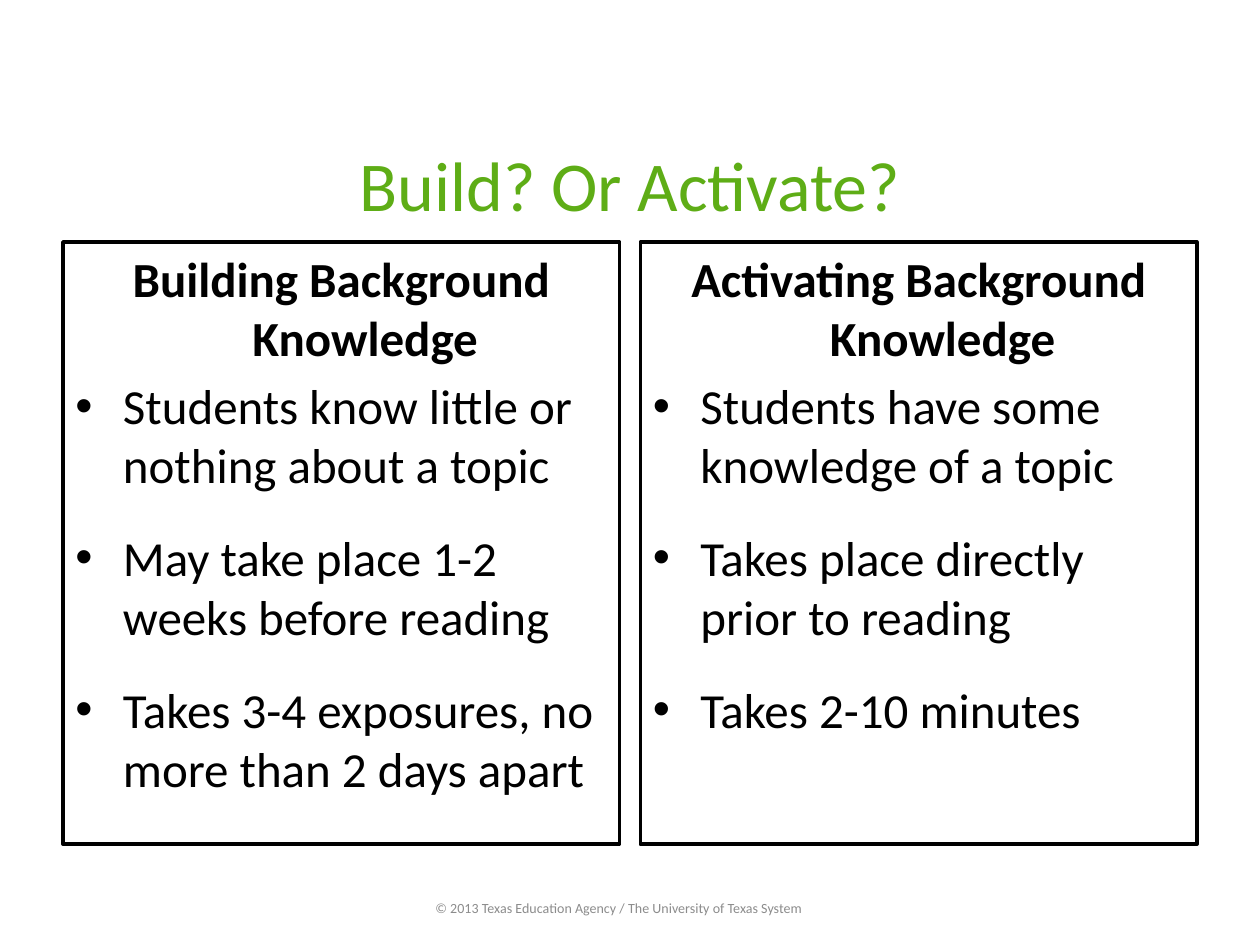
from lxml.etree import SubElement
from pptx import Presentation
from pptx.dml.color import RGBColor
from pptx.enum.shapes import MSO_SHAPE
from pptx.enum.text import MSO_ANCHOR, PP_ALIGN
from pptx.oxml.ns import qn
from pptx.util import Cm, Pt

GREEN = RGBColor(0x5E, 0xAD, 0x16)
BLACK = RGBColor(0, 0, 0)
GRAY = RGBColor(0x8C, 0x8C, 0x8C)

TITLE = "Build? Or Activate?"
COLUMNS = [
    ("Building Background Knowledge", [
        "Students know little or nothing about a topic",
        "May take place 1-2 weeks before reading",
        "Takes 3-4 exposures, no more than 2 days apart",
    ]),
    ("Activating Background Knowledge", [
        "Students have some knowledge of a topic",
        "Takes place directly prior to reading",
        "Takes 2-10 minutes",
    ]),
]
COPYRIGHT = "© 2013 Texas Education Agency / The University of Texas System"

SLIDE_WIDTH, SLIDE_HEIGHT = Cm(25.4), Cm(19.05)
MARGIN = Cm(1.27)
COLUMN_TOP, COLUMN_WIDTH, COLUMN_HEIGHT = Cm(4.88), Cm(11.22), Cm(12.14)
COLUMN_STEP = SLIDE_WIDTH - 2 * MARGIN - COLUMN_WIDTH
HANGING = Cm(0.96)


def style(paragraph, size, color, align=PP_ALIGN.CENTER, bold=False):
    paragraph.alignment = align
    font = paragraph.font
    font.name, font.size, font.bold = "Calibri", Pt(size), bold
    font.color.rgb = color


def hang(paragraph, bullet=None):
    properties = paragraph._p.get_or_add_pPr()
    properties.set("marL", str(HANGING))
    properties.set("indent", str(-HANGING))
    if bullet:
        SubElement(properties, qn("a:buFont"), typeface="Arial")
        SubElement(properties, qn("a:buChar"), char=bullet)


def add_line(slide, text, left, top, width, height, size, color):
    frame = slide.shapes.add_textbox(left, top, width, height).text_frame
    frame.word_wrap = True
    frame.vertical_anchor = MSO_ANCHOR.MIDDLE
    frame.text = text
    style(frame.paragraphs[0], size, color)


def add_column(slide, left, heading, points):
    box = slide.shapes.add_shape(
        MSO_SHAPE.RECTANGLE, left, COLUMN_TOP, COLUMN_WIDTH, COLUMN_HEIGHT)
    box.shadow.inherit = False
    box.fill.background()
    box.line.color.rgb = BLACK
    box.line.width = Pt(2)
    frame = box.text_frame
    frame.word_wrap = True
    frame.vertical_anchor = MSO_ANCHOR.TOP
    frame.text = "\n".join([heading, *points])
    for index, paragraph in enumerate(frame.paragraphs):
        if index == 0:
            hang(paragraph)
            style(paragraph, 28, BLACK, bold=True)
        else:
            paragraph.space_before = Pt(5.6 if index == 1 else 19.6)
            hang(paragraph, "•")
            style(paragraph, 28, BLACK, PP_ALIGN.LEFT)


presentation = Presentation()
presentation.slide_width, presentation.slide_height = SLIDE_WIDTH, SLIDE_HEIGHT
slide = presentation.slides.add_slide(presentation.slide_layouts[6])

add_line(slide, TITLE, MARGIN, Cm(2.64), SLIDE_WIDTH - 2 * MARGIN, Cm(2.13),
         40, GREEN)
for position, (heading, points) in enumerate(COLUMNS):
    add_column(slide, MARGIN + position * COLUMN_STEP, heading, points)
add_line(slide, COPYRIGHT, Cm(5.28), Cm(17.98), Cm(14.4), Cm(0.64), 8, GRAY)

presentation.save("out.pptx")
